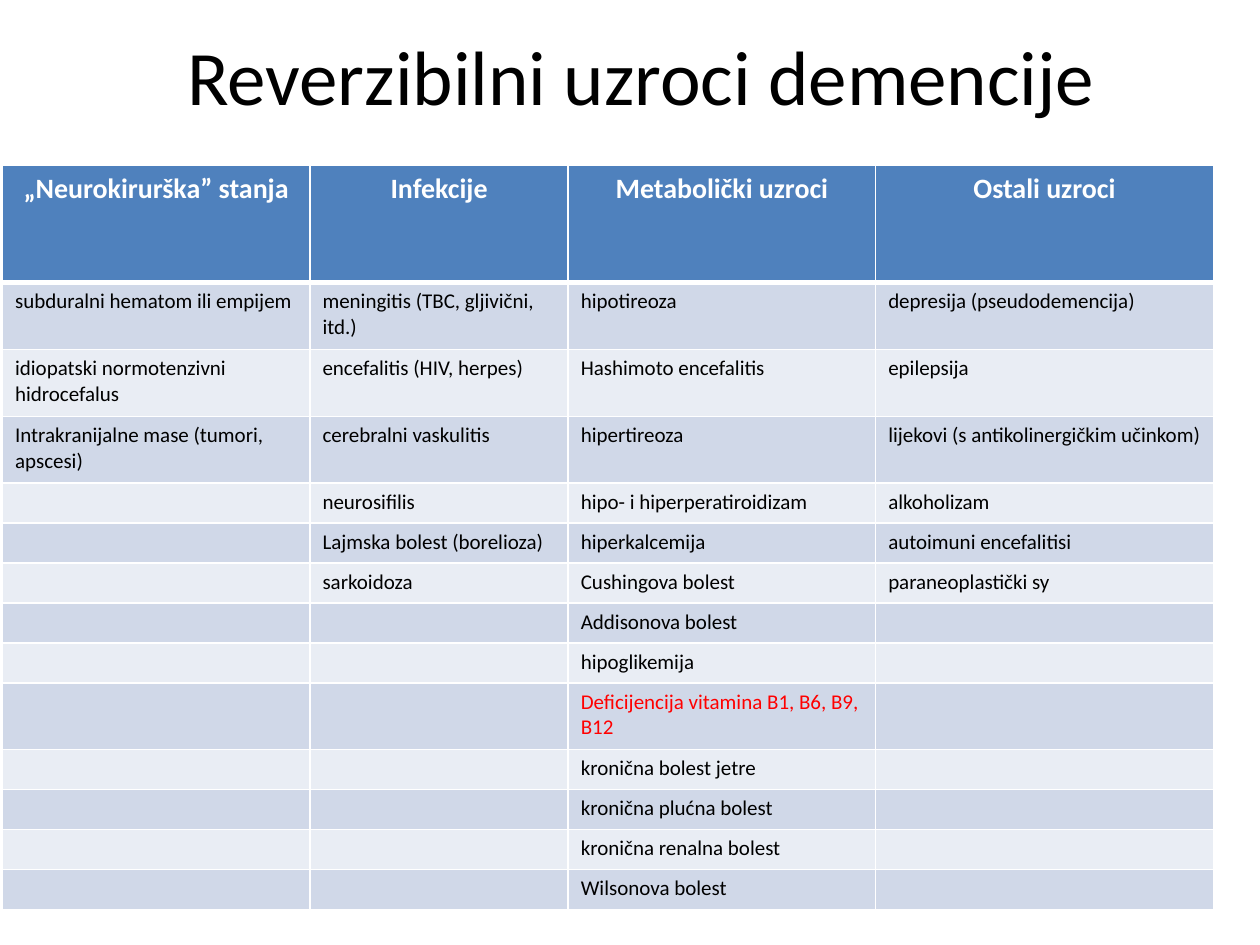
from itertools import zip_longest

from lxml import etree
from pptx import Presentation
from pptx.dml.color import RGBColor
from pptx.enum.text import MSO_ANCHOR, PP_ALIGN
from pptx.oxml.ns import qn
from pptx.util import Inches, Pt

CENTER, LEFT = PP_ALIGN.CENTER, PP_ALIGN.LEFT
MIDDLE = MSO_ANCHOR.MIDDLE

WHITE = RGBColor(0xFF, 0xFF, 0xFF)
BLACK = RGBColor(0x00, 0x00, 0x00)
RED = RGBColor(0xFF, 0x00, 0x00)
HEADER_BLUE = RGBColor(0x4F, 0x81, 0xBD)
BANDS = (RGBColor(0xE9, 0xED, 0xF4), RGBColor(0xD0, 0xD8, 0xE8))

FONT = "Calibri"
SLIDE_W, SLIDE_H = Inches(10), Inches(7.5)

# Lengths are percentages of the slide's width and height.
COLUMN_WIDTHS = (24.4, 20.5, 24.4, 26.8)
HEADER_HEIGHT, ONE_LINE, TWO_LINES = 12.4, 4.23, 7.08
WRAPPED_ROWS = (1, 2, 3, 9)

DEFICIENCY = "Deficijencija vitamina B1, B6, B9, B12"
CAUSES = {
    "„Neurokirurška” stanja": [
        "subduralni hematom ili empijem",
        "idiopatski normotenzivni hidrocefalus",
        "Intrakranijalne mase (tumori, apscesi)",
    ],
    "Infekcije": [
        "meningitis (TBC, gljivični, itd.)",
        "encefalitis (HIV, herpes)",
        "cerebralni vaskulitis",
        "neurosifilis",
        "Lajmska bolest (borelioza)",
        "sarkoidoza",
    ],
    "Metabolički uzroci": [
        "hipotireoza",
        "Hashimoto encefalitis",
        "hipertireoza",
        "hipo- i hiperperatiroidizam",
        "hiperkalcemija",
        "Cushingova bolest",
        "Addisonova bolest",
        "hipoglikemija",
        DEFICIENCY,
        "kronična bolest jetre",
        "kronična plućna bolest",
        "kronična renalna bolest",
        "Wilsonova bolest",
    ],
    "Ostali uzroci": [
        "depresija (pseudodemencija)",
        "epilepsija",
        "lijekovi (s antikolinergičkim učinkom)",
        "alkoholizam",
        "autoimuni encefalitisi",
        "paraneoplastički sy",
    ],
}


def across(percent):
    return int(SLIDE_W * percent / 100)


def down(percent):
    return int(SLIDE_H * percent / 100)


def write(tf, text, size, color, align, bold=False):
    p = tf.paragraphs[0]
    p.alignment = align
    if not text:
        # An empty cell still needs a text size, or its row grows.
        etree.SubElement(p._p, qn("a:endParaRPr"), sz=str(size * 100))
        return
    r = p.add_run()
    r.text = text
    r.font.name = FONT
    r.font.size = Pt(size)
    r.font.bold = bold
    r.font.color.rgb = color


def add_title(slide, text):
    sp = slide.shapes.add_textbox(across(5.9), down(-0.4), across(90), down(16.67))
    tf = sp.text_frame
    tf.word_wrap = True
    tf.vertical_anchor = MIDDLE
    write(tf, text, 44, BLACK, CENTER)


def set_borders(cell, widths):
    """Draw white borders; widths are points for left, right, top, bottom."""
    tc_pr = cell._tc.get_or_add_tcPr()
    for i, (side, width) in enumerate(zip("LRTB", widths)):
        ln = etree.Element(qn(f"a:ln{side}"), w=str(Pt(width)))
        fill = etree.SubElement(ln, qn("a:solidFill"))
        etree.SubElement(fill, qn("a:srgbClr"), val=str(WHITE))
        tc_pr.insert(i, ln)


def row_height(row):
    if row == 0:
        return HEADER_HEIGHT
    return TWO_LINES if row in WRAPPED_ROWS else ONE_LINE


def fill_cell(cell, row, text):
    header = row == 0
    cell.fill.solid()
    cell.fill.fore_color.rgb = HEADER_BLUE if header else BANDS[row % 2]
    set_borders(cell, (1, 1, 3 if row == 1 else 1, 3 if header else 1))
    if header:
        write(cell.text_frame, text, 16, WHITE, CENTER, bold=True)
    else:
        color = RED if text == DEFICIENCY else BLACK
        write(cell.text_frame, text, 12, color, LEFT)


def add_causes_table(slide, causes):
    rows = [tuple(causes), *zip_longest(*causes.values(), fillvalue="")]
    heights = [row_height(i) for i in range(len(rows))]
    table = slide.shapes.add_table(
        len(rows), len(causes), across(0.2), down(17.5),
        across(sum(COLUMN_WIDTHS)), down(sum(heights))).table
    for column, width in zip(table.columns, COLUMN_WIDTHS):
        column.width = across(width)
    for i, (texts, height) in enumerate(zip(rows, heights)):
        table.rows[i].height = down(height)
        for j, text in enumerate(texts):
            fill_cell(table.cell(i, j), i, text)


def main():
    prs = Presentation()
    prs.slide_width, prs.slide_height = SLIDE_W, SLIDE_H
    slide = prs.slides.add_slide(prs.slide_layouts[6])
    add_title(slide, "Reverzibilni uzroci demencije")
    add_causes_table(slide, CAUSES)
    prs.save("out.pptx")


if __name__ == "__main__":
    main()
